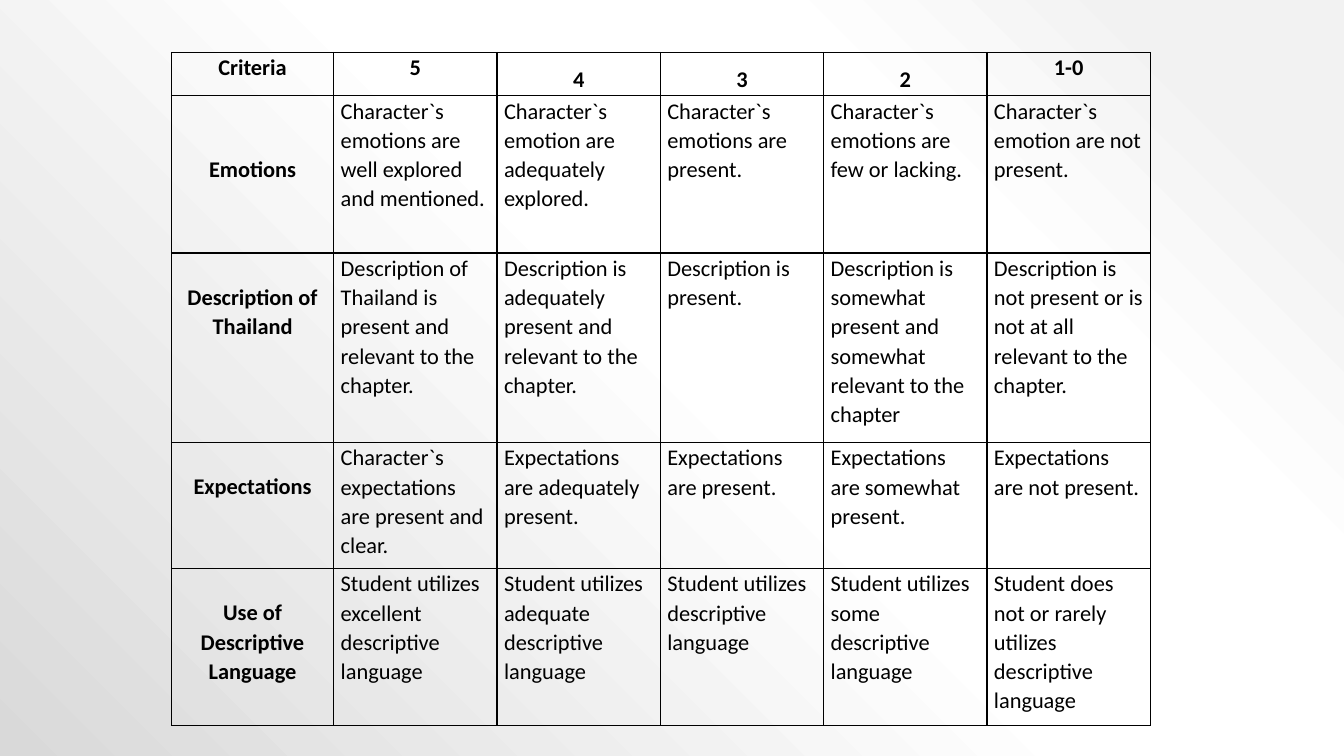
from dataclasses import dataclass

from lxml import etree
from pptx import Presentation
from pptx.dml.color import RGBColor
from pptx.enum.text import PP_ALIGN
from pptx.oxml.ns import qn
from pptx.util import Emu, Pt

CENTER = PP_ALIGN.CENTER
LEFT = PP_ALIGN.LEFT
PX = 9144  # 100 px to the inch
FONT = "Calibri"
BLACK = "000000"
TEXT_LINE = 29
SIDE_INSET = 7
LINE_SPACING = 1.07
LOW_HEADER_SPACING = 1.5
LOW_HEADERS = ("4", "3", "2")
BORDERS = ("a:lnL", "a:lnR", "a:lnT", "a:lnB")
BACKGROUND_STOPS = ((10, "F2F2F2"), (28, "FFFFFF"), (48, "FFFFFF"), (100, "D9D9D9"))
COLUMN_WIDTHS = (161,) + (162,) * 5


@dataclass
class RubricRow:
    height: int
    label: str
    levels: tuple[str, ...]
    lines_above: int = 1


HEADER = RubricRow(43, "Criteria", ("5", "4", "3", "2", "1-0"), 0)
ROWS = (
    HEADER,
    RubricRow(156, "Emotions", (
        "Character`s emotions are well explored and mentioned.",
        "Character`s emotion are adequately explored.",
        "Character`s emotions are present.",
        "Character`s emotions are few or lacking.",
        "Character`s emotion are not present.",
    ), 2),
    RubricRow(188, "Description of Thailand", (
        "Description of Thailand is present and relevant to the chapter.",
        "Description is adequately present and relevant to the chapter.",
        "Description is present.",
        "Description is somewhat present and somewhat relevant to the chapter",
        "Description is not present or is not at all relevant to the chapter.",
    )),
    RubricRow(125, "Expectations", (
        "Character`s expectations are present and clear.",
        "Expectations are adequately present.",
        "Expectations are present.",
        "Expectations are somewhat present.",
        "Expectations are not present.",
    )),
    RubricRow(156, "Use of Descriptive Language", (
        "Student utilizes excellent descriptive language",
        "Student utilizes adequate descriptive language",
        "Student utilizes descriptive language",
        "Student utilizes some descriptive language",
        "Student does not or rarely utilizes descriptive language",
    )),
)


def px(length: int) -> Emu:
    return Emu(length * PX)


def rgb(color: str) -> RGBColor:
    return RGBColor.from_string(color)


def paint_background(slide) -> None:
    """Fill with a circular gradient centred on the top right corner."""
    slide.background.fill.gradient()
    gradient = slide.element.find(".//" + qn("a:gradFill"))
    for child in list(gradient):
        gradient.remove(child)
    stops = etree.SubElement(gradient, qn("a:gsLst"))
    for percent, color in BACKGROUND_STOPS:
        stop = etree.SubElement(stops, qn("a:gs"), pos=str(percent * 1000))
        etree.SubElement(stop, qn("a:srgbClr"), val=color)
    circle = etree.SubElement(gradient, qn("a:path"), path="circle")
    etree.SubElement(circle, qn("a:fillToRect"), l="100000", b="100000")


def draw_borders(cell) -> None:
    properties = cell._tc.get_or_add_tcPr()
    for position, tag in enumerate(BORDERS):
        line = etree.Element(qn(tag), w=str(Pt(1)))
        fill = etree.SubElement(line, qn("a:solidFill"))
        etree.SubElement(fill, qn("a:srgbClr"), val=BLACK)
        properties.insert(position, line)


def write_cell(cell, text: str, heading: bool, lines_above: int, spacing: float) -> None:
    cell.fill.background()
    draw_borders(cell)
    cell.margin_left = cell.margin_right = px(SIDE_INSET)
    cell.margin_top = px(lines_above * TEXT_LINE)
    cell.margin_bottom = px(0)
    para = cell.text_frame.paragraphs[0]
    para.text = text
    para.alignment = CENTER if heading else LEFT
    para.line_spacing = spacing
    font = para.runs[0].font
    font.name = FONT
    font.size = Pt(16)
    font.bold = heading
    font.color.rgb = rgb(BLACK)


def add_rubric(slide) -> None:
    height = sum(row.height for row in ROWS)
    frame = slide.shapes.add_table(
        len(ROWS), len(COLUMN_WIDTHS), px(170), px(52), px(sum(COLUMN_WIDTHS)), px(height))
    table = frame.table
    table.first_row = table.horz_banding = False
    for column, width in zip(table.columns, COLUMN_WIDTHS):
        column.width = px(width)
    for index, row in enumerate(ROWS):
        table.rows[index].height = px(row.height)
        write_cell(table.cell(index, 0), row.label, True, row.lines_above, LINE_SPACING)
        for column_index, text in enumerate(row.levels, start=1):
            spacing = LOW_HEADER_SPACING if text in LOW_HEADERS else LINE_SPACING
            write_cell(table.cell(index, column_index), text, row is HEADER, 0, spacing)


def main() -> None:
    deck = Presentation()
    deck.slide_width, deck.slide_height = px(1333), px(750)
    slide = deck.slides.add_slide(deck.slide_layouts.get_by_name("Blank"))
    paint_background(slide)
    add_rubric(slide)
    deck.save("out.pptx")


if __name__ == "__main__":
    main()
